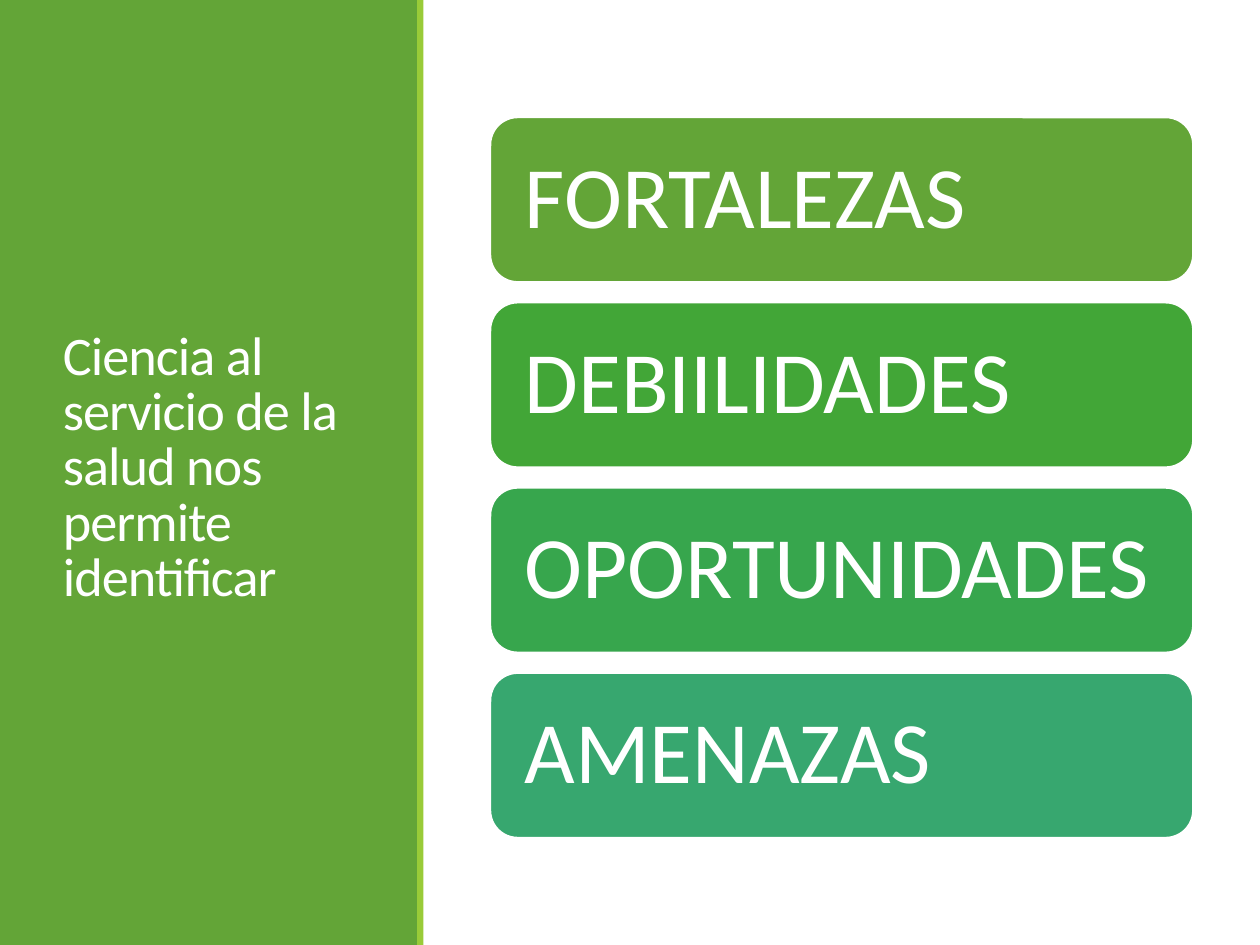
from dataclasses import dataclass

from pptx import Presentation
from pptx.dml.color import RGBColor
from pptx.enum.shapes import MSO_SHAPE
from pptx.enum.text import MSO_ANCHOR, PP_ALIGN
from pptx.util import Inches, Pt

RECT = MSO_SHAPE.RECTANGLE
ROUNDED = MSO_SHAPE.ROUNDED_RECTANGLE
MIDDLE = MSO_ANCHOR.MIDDLE
LEFT = PP_ALIGN.LEFT

FONT = "Calibri"
COLORS = {
    "white": "FFFFFF",
    "panel": "63A537",
    "accent": "99CB38",
    "fortalezas": "63A537",
    "debilidades": "42A637",
    "oportunidades": "37A64D",
    "amenazas": "37A76F",
}


@dataclass
class Box:
    left: float
    top: float
    width: float
    height: float

    def emu(self) -> tuple:
        return tuple(Inches(v) for v in (self.left, self.top, self.width, self.height))


@dataclass
class Card:
    text: str
    color: str


CARDS = [
    Card("FORTALEZAS", "fortalezas"),
    Card("DEBIILIDADES", "debilidades"),
    Card("OPORTUNIDADES", "oportunidades"),
    Card("AMENAZAS", "amenazas"),
]
FIRST_CARD = Box(3.89, 0.93, 5.58, 1.31)
CARD_PITCH = 1.47


def rgb(name: str) -> RGBColor:
    return RGBColor.from_string(COLORS[name])


def add_block(s, kind, box: Box, color: str):
    sp = s.shapes.add_shape(kind, *box.emu())
    sp.shadow.inherit = False
    sp.fill.solid()
    sp.fill.fore_color.rgb = rgb(color)
    sp.line.fill.background()
    return sp


def write(sp, text: str, size: float, spacing: float):
    tf = sp.text_frame
    tf.word_wrap = True
    tf.vertical_anchor = MIDDLE
    p = tf.paragraphs[0]
    p.alignment = LEFT
    p.line_spacing = spacing
    r = p.add_run()
    r.text = text
    r.font.name = FONT
    r.font.size = Pt(size)
    r.font.color.rgb = rgb("white")
    return r


def add_title(s, box: Box, text: str) -> None:
    r = write(s.shapes.add_textbox(*box.emu()), text, 31, 0.85)
    r._r.get_or_add_rPr().set("spc", "-50")


def add_card(s, card: Card, box: Box) -> None:
    sp = add_block(s, ROUNDED, box, card.color)
    sp.line.color.rgb = rgb("white")
    sp.line.width = Pt(1.25)
    tf = sp.text_frame
    tf.margin_left = tf.margin_right = Inches(0.21)
    tf.margin_top = tf.margin_bottom = Inches(0.21)
    write(sp, card.text, 50, 0.9)


def main() -> None:
    """Build the slide with a title panel and four analysis cards."""
    prs = Presentation()
    prs.slide_width, prs.slide_height = Inches(10), Inches(7.5)
    s = prs.slides.add_slide(prs.slide_layouts[6])
    add_block(s, RECT, Box(0, 0, 3.32, 7.5), "panel")
    add_title(s, Box(0.4, 0.57, 2.53, 6.31),
              "Ciencia al servicio de la salud nos permite identificar")
    add_block(s, RECT, Box(3.31, 0, 0.05, 7.5), "accent")
    for i, card in enumerate(CARDS):
        top = FIRST_CARD.top + i * CARD_PITCH
        add_card(s, card, Box(FIRST_CARD.left, top, FIRST_CARD.width, FIRST_CARD.height))
    prs.save("out.pptx")


if __name__ == "__main__":
    main()
